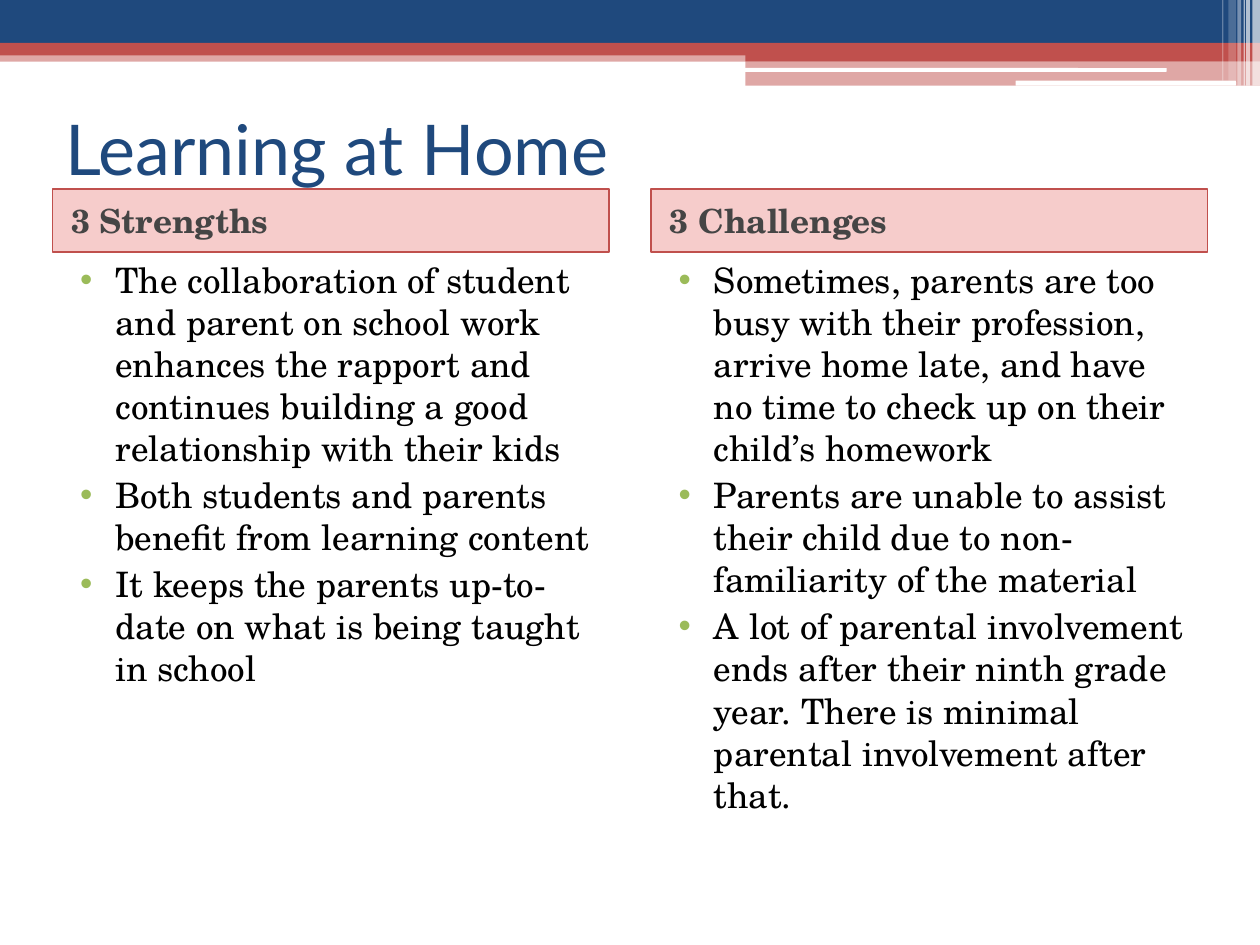
from pptx import Presentation, util as u
from pptx.dml.color import RGBColor
from pptx.enum import shapes, text
from pptx.oxml import ns, xmlchemy as xc

NAVY = RGBColor(0x1F, 0x49, 0x7D)
RED = RGBColor(0xC0, 0x50, 0x4D)
ROSE = RGBColor(0xDD, 0x35, 0x30)
GREEN = RGBColor(0x9B, 0xBB, 0x59)
GREY = RGBColor(0x45, 0x45, 0x45)
BLACK = RGBColor(0, 0, 0)
WHITE = RGBColor(255, 255, 255)

CELL = u.Inches(1) / 12
COLS, ROWS = 120, 90
EDGE, WIDE, STEP = 5, 53, 57
SERIF = "TeX Gyre Schola"
TITLE = {"size": u.Pt(40), "name": "Lato", "bold": False}
HEAD = {"size": u.Pt(19), "name": SERIF, "bold": True}
ITEM = {"size": u.Pt(20), "name": SERIF, "bold": False}

BANDS = [
    (0, 4.8, COLS, 1.08, RED, 50),
    (0, 0, COLS, 4.08, NAVY, 100),
    (0, 4.08, COLS, 1.2, RED, 100),
    (71, 4.68, 49, 1.14, RED, 100),
    (71, 5.82, 49, 2.34, RED, 50),
]
SLITS = [(70.92, 6.48, 40.2, 0.36), (96.72, 7.68, 21, 0.48)]
STRIPES = [
    (119.28, 0.72, 8.16, 65),
    (118.68, 0.36, 8.16, 65),
    (118.44, 0.12, 8.16, 60),
    (117.84, 0.36, 8.16, 40),
    (117, 0.72, 7.68, 20),
    (116.4, 0.12, 7.68, 30),
]
SIDES = [
    ("3 Strengths", 51, [
        "The collaboration of student and parent on school work enhances "
        "the rapport and continues building a good relationship with their kids",
        "Both students and parents benefit from learning content",
        "It keeps the parents up-to-date on what is being taught in school",
    ]),
    ("3 Challenges", 61, [
        "Sometimes, parents are too busy with their profession, arrive home "
        "late, and have no time to check up on their child’s homework",
        "Parents are unable to assist their child due to non-familiarity "
        "of the material",
        "A lot of parental involvement ends after their ninth grade year. "
        "There is minimal parental involvement after that.",
    ]),
]


def style(item, form):
    """Set each attribute of item from the dict form."""
    for key, val in form.items():
        setattr(item, key, val)


def grid(*cells):
    """Turn grid cells into slide lengths."""
    return [round(n * CELL) for n in cells]


def paint(shape, color, alpha=100):
    """Fill a shape with a colour at a percentage of opacity."""
    shape.fill.solid()
    shape.fill.fore_color.rgb = color
    if alpha < 100:
        clr = shape._element.spPr.xpath("./a:solidFill/a:srgbClr")[0]
        add(clr, "a:alpha", val=alpha * 1000)


def add(node, tag, **attrs):
    """Append a child element with attributes and return it."""
    kid = xc.OxmlElement(tag)
    for key, val in attrs.items():
        kid.set(key, str(val))
    node.append(kid)
    return kid


def bar(slide, cells, color, alpha=100, kind=shapes.MSO_SHAPE.RECTANGLE):
    """Draw a plain bar without outline or shadow."""
    shape = slide.shapes.add_shape(kind, *grid(*cells))
    shape.shadow.inherit = False
    shape.line.fill.background()
    paint(shape, color, alpha)


def write(hold, cells, lines, font, color, anchor):
    """Place a placeholder, write its lines and return its paragraphs."""
    style(hold, dict(zip(("left", "top", "width", "height"), grid(*cells))))
    frame = hold.text_frame
    frame.text = "\n".join(lines)
    style(frame, {"vertical_anchor": anchor, "word_wrap": True,
                  "auto_size": text.MSO_AUTO_SIZE.NONE})
    for para in frame.paragraphs:
        para.alignment = text.PP_ALIGN.LEFT
        style(para.runs[0].font, font)
        para.runs[0].font.color.rgb = color
    return frame.paragraphs


def indent(para, left, first):
    """Set the spacing and indents of a paragraph and return its properties."""
    para.space_before = u.Pt(3)
    prop = para._p.get_or_add_pPr()
    prop.set("marL", str(u.Inches(left)))
    prop.set("indent", str(u.Inches(first)))
    return prop


def head(hold, left, label):
    """Fill a tinted column heading."""
    cells = (left, 18, WIDE, 6)
    paras = write(hold, cells, [label], HEAD, GREY, text.MSO_ANCHOR.MIDDLE)
    indent(paras[0], 0.05, 0)
    paint(hold, ROSE, 25)
    hold.line.color.rgb = RED
    hold.line.width = u.Pt(1)


def points(hold, left, tall, lines):
    """Fill a bulleted list."""
    cells = (left, 24, WIDE, tall)
    for para in write(hold, cells, lines, ITEM, BLACK, text.MSO_ANCHOR.TOP):
        prop = indent(para, 0.4, -0.28)
        add(add(prop, "a:buClr"), "a:srgbClr", val=GREEN)
        add(prop, "a:buChar", char="•")


def banner(slide):
    """Draw the bands, slits and stripes along the top."""
    for *cells, color, alpha in BANDS:
        bar(slide, cells, color, alpha)
    for cells in SLITS:
        bar(slide, cells, WHITE, kind=shapes.MSO_SHAPE.ROUNDED_RECTANGLE)
    for left, wide, tall, alpha in STRIPES:
        bar(slide, (left, 0, wide, tall), WHITE, alpha)


def main():
    """Build and save the slide."""
    deck = Presentation()
    deck.slide_width, deck.slide_height = grid(COLS, ROWS)
    slide = deck.slides.add_slide(deck.slide_layouts.get_by_name("Comparison"))
    banner(slide)
    write(slide.shapes.title, (EDGE, 7, 110, 14), ["Learning at Home"],
          TITLE, NAVY, text.MSO_ANCHOR.MIDDLE)
    holds = {h.placeholder_format.idx: h for h in slide.placeholders}
    for i, (label, tall, lines) in enumerate(SIDES):
        left = EDGE + i * STEP
        head(holds[2 * i + 1], left, label)
        points(holds[2 * i + 2], left, tall, lines)
    for idx in (10, 11, 12):
        if idx in holds:
            slide.shapes._spTree.remove(holds[idx]._element)
    deck.save("out.pptx")


if __name__ == "__main__":
    main()
